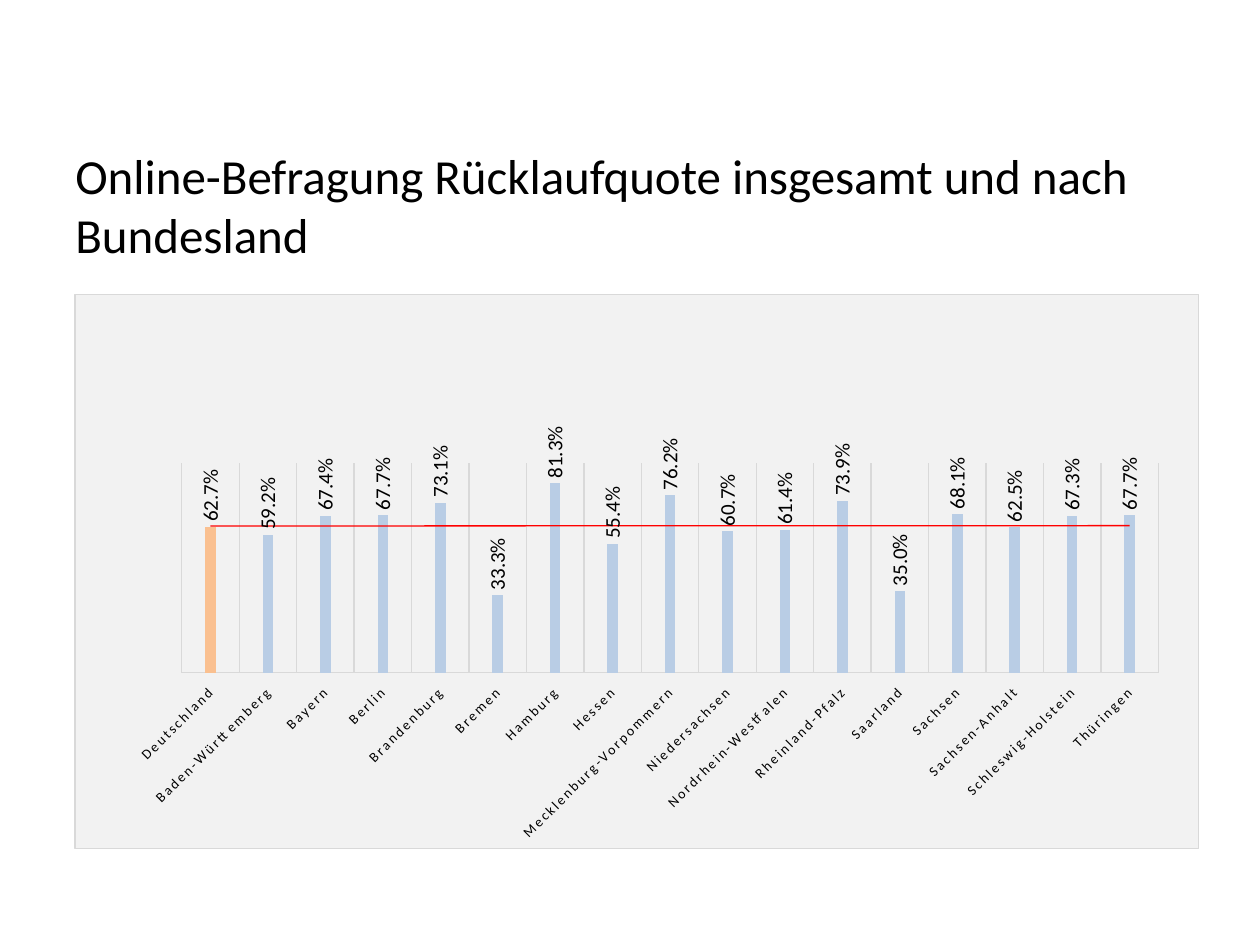
from pptx import Presentation
from pptx.chart.data import CategoryChartData
from pptx.dml.color import RGBColor
from pptx.enum.chart import XL_CHART_TYPE as ChartType
from pptx.enum.chart import XL_LABEL_POSITION as LabelPos
from pptx.enum.chart import XL_TICK_LABEL_POSITION as TickLabelPos
from pptx.enum.chart import XL_TICK_MARK as TickMark
from pptx.enum.text import MSO_ANCHOR as Anchor
from pptx.oxml import parse_xml
from pptx.oxml.ns import nsdecls
from pptx.util import Inches, Pt

BLACK = RGBColor(0x00, 0x00, 0x00)
GRID = RGBColor(0xD9, 0xD9, 0xD9)
PANEL = RGBColor(0xF2, 0xF2, 0xF2)
STATE_BLUE = RGBColor(0xB9, 0xCD, 0xE5)
COUNTRY_ORANGE = RGBColor(0xFA, 0xC0, 0x90)
TREND_RED = RGBColor(0xFF, 0x00, 0x00)
FONT = "Calibri"

RATES = {
    "Deutschland": 0.627,
    "Baden-Württemberg": 0.592,
    "Bayern": 0.674,
    "Berlin": 0.677,
    "Brandenburg": 0.731,
    "Bremen": 0.333,
    "Hamburg": 0.813,
    "Hessen": 0.554,
    "Mecklenburg-Vorpommern": 0.762,
    "Niedersachsen": 0.607,
    "Nordrhein-Westfalen": 0.614,
    "Rheinland-Pfalz": 0.739,
    "Saarland": 0.35,
    "Sachsen": 0.681,
    "Sachsen-Anhalt": 0.625,
    "Schleswig-Holstein": 0.673,
    "Thüringen": 0.677,
}


def set_font(font, size):
    font.name = FONT
    font.size = Pt(size)
    font.bold = False
    font.color.rgb = BLACK


def line_xml(color):
    return f'<a:ln w="9525"><a:solidFill><a:srgbClr val="{color}"/></a:solidFill></a:ln>'


prs = Presentation()
prs.slide_width, prs.slide_height = Inches(10), Inches(7.5)
slide = prs.slides.add_slide(prs.slide_layouts[6])

# Title
title = slide.shapes.add_textbox(Inches(0.5), Inches(1), Inches(9), Inches(1.25)).text_frame
title.word_wrap = True
title.vertical_anchor = Anchor.MIDDLE
title.text = "Online-Befragung Rücklaufquote insgesamt und nach Bundesland"
set_font(title.paragraphs[0].font, 28)

# Response rates
rates = CategoryChartData(number_format="0.0%")
rates.categories = list(RATES)
rates.add_series("Series 1", list(RATES.values()))
chart = slide.shapes.add_chart(
    ChartType.COLUMN_CLUSTERED, Inches(0.59), Inches(2.33), Inches(8.93), Inches(4.41), rates
).chart
chart.has_title = False
chart.has_legend = False
set_font(chart.font, 10)

# Columns: the whole country stands out from the states
plot = chart.plots[0]
plot.gap_width = 444
plot.overlap = -90
plot.vary_by_categories = False
columns = plot.series[0]
for column, color in ((columns, STATE_BLUE), (columns.points[0], COUNTRY_ORANGE)):
    column.format.fill.solid()
    column.format.fill.fore_color.rgb = color

labels = columns.data_labels
labels.show_value = True
labels.position = LabelPos.OUTSIDE_END
labels.number_format = "0.0%"
labels.number_format_is_linked = False
set_font(labels.font, 12)

# Axes
states = chart.category_axis
states.major_tick_mark = states.minor_tick_mark = TickMark.NONE
states.tick_label_position = TickLabelPos.LOW
states.has_major_gridlines = True
for line in (states.format.line, states.major_gridlines.format.line):
    line.color.rgb = GRID
    line.width = Pt(0.75)
set_font(states.tick_labels.font, 8)

scale = chart.value_axis
scale.minimum_scale, scale.maximum_scale = 0, 0.9
scale.has_major_gridlines = False
scale.visible = False

# Turned labels and letter spacing
space = chart.element
for owner, angle in (("c:dLbls", -90), ("c:catAx", -45)):
    body = space.xpath(f".//{owner}/c:txPr/a:bodyPr")[0]
    body.set("rot", str(angle * 60000))
    body.set("vert", "horz")
space.xpath(".//c:catAx/c:txPr//a:defRPr")[0].set("spc", "120")

# Linear trend line
space.xpath(".//c:ser/c:cat")[0].addprevious(parse_xml(
    f'<c:trendline {nsdecls("c", "a")}><c:spPr>{line_xml(TREND_RED)}</c:spPr>'
    '<c:trendlineType val="linear"/><c:dispRSqr val="0"/><c:dispEq val="0"/></c:trendline>'
))

# Panel behind the chart
space.xpath("./c:txPr")[0].addprevious(parse_xml(
    f'<c:spPr {nsdecls("c", "a")}><a:solidFill><a:srgbClr val="{PANEL}"/></a:solidFill>'
    f'{line_xml(GRID)}</c:spPr>'
))

# Plot area position
plot_area = space.xpath(".//c:plotArea")[0]
for old_layout in plot_area.xpath("./c:layout"):
    plot_area.remove(old_layout)
plot_area.insert(0, parse_xml(
    f'<c:layout {nsdecls("c")}><c:manualLayout><c:layoutTarget val="inner"/>'
    '<c:xMode val="edge"/><c:yMode val="edge"/><c:x val="0.095"/><c:y val="0.305"/>'
    '<c:w val="0.869"/><c:h val="0.378"/></c:manualLayout></c:layout>'
))

prs.save("out.pptx")
